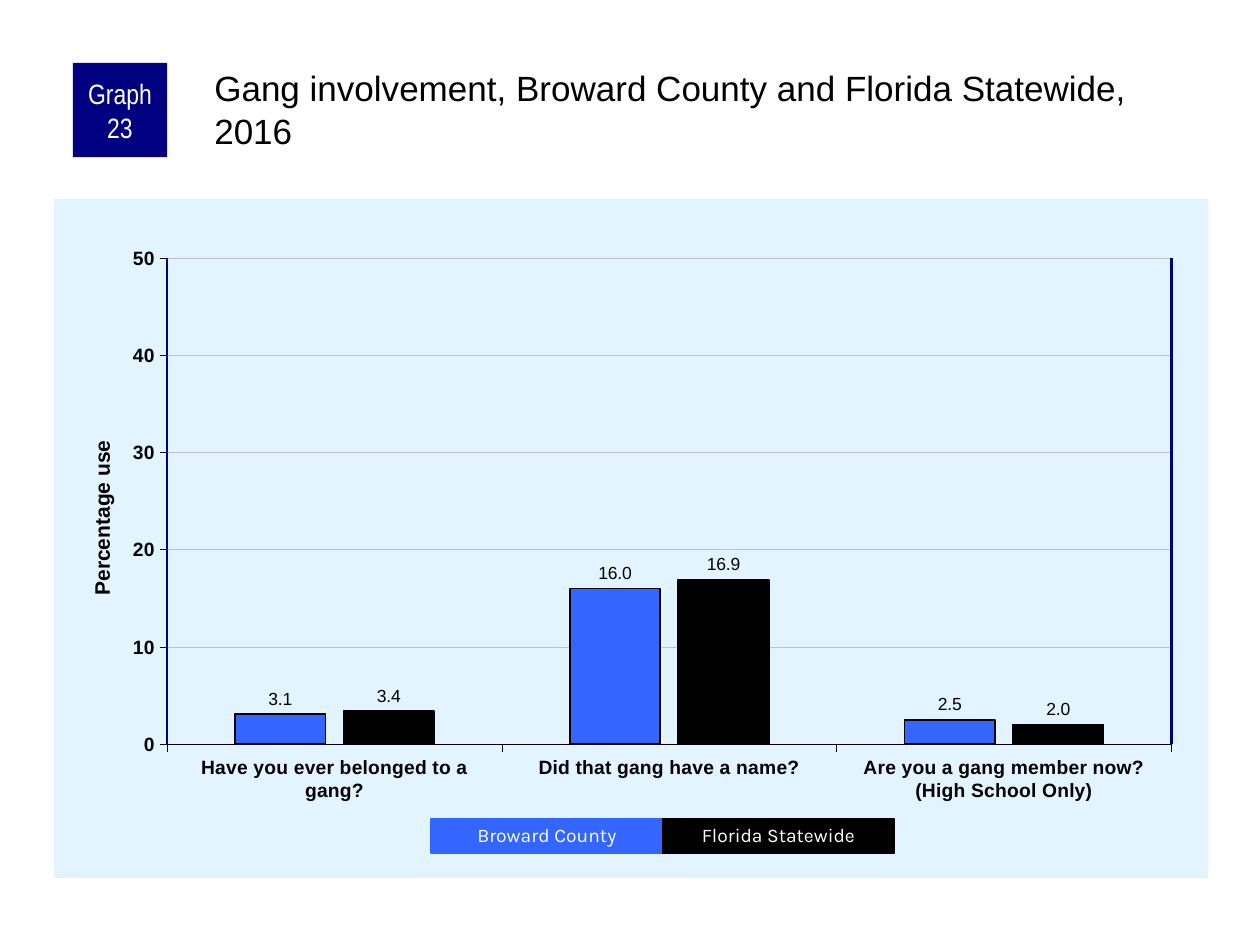
from dataclasses import dataclass

import pptx
import pptx.chart.data
import pptx.dml.color
import pptx.enum.chart
import pptx.enum.shapes
import pptx.enum.text
import pptx.oxml
import pptx.oxml.ns
import pptx.util
from pptx.util import Cm, Pt

NAVY, BLUE, BLACK, WHITE = "000080", "3366FF", "000000", "FFFFFF"
PALE_BLUE, GREY = "E1F4FF", "C0C0C0"
qn = pptx.oxml.ns.qn


@dataclass(frozen=True)
class Box:
    """A rectangle in centimetres."""
    left: float
    top: float
    width: float
    height: float

    def lengths(self) -> tuple:
        return Cm(self.left), Cm(self.top), Cm(self.width), Cm(self.height)


@dataclass(frozen=True)
class Region:
    name: str
    color: str
    values: tuple


REGIONS = [
    Region("Broward County", BLUE, (3.1, 16.0, 2.5)),
    Region("Florida Statewide", BLACK, (3.4, 16.9, 2.0)),
]
QUESTIONS = [
    "Have you ever belonged to a gang?",
    "Did that gang have a name?",
    "Are you a gang member now?\n(High School Only)",
]
CHART = Box(1.09, 4.01, 23.27, 13.69)
PLOT_SHARE = Box(0.098, 0.087, 0.87, 0.716)  # fractions of the chart
KEY = Box(8.69, 16.51, 4.67, 0.69)


def rgb(color: str) -> pptx.dml.color.RGBColor:
    return pptx.dml.color.RGBColor.from_string(color)


def set_fill(fill, color: str) -> None:
    fill.solid()
    fill.fore_color.rgb = rgb(color)


def set_line(line, color: str, width: float) -> None:
    set_fill(line.fill, color)
    line.width = Pt(width)


def set_font(font, name: str, size: float, color: str, bold: bool = False) -> None:
    font.name, font.size, font.bold = name, Pt(size), bold
    font.color.rgb = rgb(color)


def add_label(slide, box: Box, text: str, font_name: str, size: float, fill: str):
    """Add a filled rectangle with centred white text."""
    shape = slide.shapes.add_shape(pptx.enum.shapes.MSO_SHAPE.RECTANGLE, *box.lengths())
    shape.shadow.inherit = False
    set_fill(shape.fill, fill)
    shape.line.fill.background()
    frame = shape.text_frame
    frame.word_wrap = True
    frame.vertical_anchor = pptx.enum.text.MSO_ANCHOR.MIDDLE
    paragraph = frame.paragraphs[0]
    paragraph.alignment = pptx.enum.text.PP_ALIGN.CENTER
    run = paragraph.add_run()
    run.text = text
    set_font(run.font, font_name, size, WHITE)
    return shape


def add_side_line(slide, x: float, top: float, bottom: float) -> None:
    connector = slide.shapes.add_connector(
        pptx.enum.shapes.MSO_CONNECTOR.STRAIGHT, Cm(x), Cm(top), Cm(x), Cm(bottom))
    set_line(connector.line, NAVY, 1.25)
    properties = connector._element.spPr
    properties.append(pptx.oxml.parse_xml(
        f'<a:effectLst {pptx.oxml.ns.nsdecls("a")}/>'))


def set_layout(parent, settings: dict) -> None:
    """Place a chart part by hand, in fractions of the chart."""
    old = parent.find(qn("c:layout"))
    position = 0 if old is None else parent.index(old)
    if old is not None:
        parent.remove(old)
    parts = "".join(f'<c:{tag} val="{value}"/>' for tag, value in settings.items())
    parent.insert(position, pptx.oxml.parse_xml(
        f'<c:layout {pptx.oxml.ns.nsdecls("c")}>'
        f'<c:manualLayout>{parts}</c:manualLayout></c:layout>'))


def format_axis(axis) -> None:
    axis.major_tick_mark = pptx.enum.chart.XL_TICK_MARK.OUTSIDE
    axis.minor_tick_mark = pptx.enum.chart.XL_TICK_MARK.NONE
    set_font(axis.tick_labels.font, "Arial", 11, BLACK, bold=True)
    set_line(axis.format.line, BLACK, 0.25)


def format_value_axis(axis) -> None:
    format_axis(axis)
    axis.minimum_scale, axis.maximum_scale, axis.major_unit = 0, 50, 10
    axis.has_major_gridlines = True
    set_line(axis.major_gridlines.format.line, GREY, 0.25)
    axis.tick_labels.number_format = "0"
    axis.tick_labels.number_format_is_linked = False
    axis.has_title = True
    run = axis.axis_title.text_frame.paragraphs[0].add_run()
    run.text = "Percentage use"
    set_font(run.font, "Arial", 12, BLACK, bold=True)
    title = axis.axis_title._element
    body = title.find(".//" + qn("a:bodyPr"))
    body.set("rot", "-5400000")
    body.set("vert", "horz")
    set_layout(title, {"xMode": "edge", "yMode": "edge", "x": 0.027, "y": 0.35})


def add_gang_chart(slide) -> None:
    data = pptx.chart.data.CategoryChartData(number_format="0.0")
    data.categories = QUESTIONS
    for region in REGIONS:
        data.add_series(region.name, region.values)
    chart = slide.shapes.add_chart(
        pptx.enum.chart.XL_CHART_TYPE.COLUMN_CLUSTERED, *CHART.lengths(), data).chart
    chart.has_title = chart.has_legend = False
    set_font(chart.font, "Arial", 11.5, BLACK)
    chart_space = chart._chartSpace
    chart_space.find(qn("c:chart")).addnext(pptx.oxml.parse_xml(
        f'<c:spPr {pptx.oxml.ns.nsdecls("c", "a")}><a:solidFill>'
        f'<a:srgbClr val="{PALE_BLUE}"/></a:solidFill>'
        '<a:ln><a:noFill/></a:ln></c:spPr>'))
    set_layout(chart_space.find(".//" + qn("c:plotArea")), {
        "layoutTarget": "inner", "xMode": "edge", "yMode": "edge",
        "x": PLOT_SHARE.left, "y": PLOT_SHARE.top,
        "w": PLOT_SHARE.width, "h": PLOT_SHARE.height})
    format_axis(chart.category_axis)
    format_value_axis(chart.value_axis)

    plot = chart.plots[0]
    plot.gap_width, plot.overlap, plot.vary_by_categories = 150, -20, False
    for series, region in zip(plot.series, REGIONS):
        set_fill(series.format.fill, region.color)
        set_line(series.format.line, BLACK, 1)
        labels = series.data_labels
        labels.show_value = True
        labels.number_format, labels.number_format_is_linked = "0.0", False
        labels.position = pptx.enum.chart.XL_LABEL_POSITION.OUTSIDE_END
        set_font(labels.font, "Arial", 10, BLACK)

    left = CHART.left + PLOT_SHARE.left * CHART.width
    top = CHART.top + PLOT_SHARE.top * CHART.height
    bottom = top + PLOT_SHARE.height * CHART.height
    for x in (left, left + PLOT_SHARE.width * CHART.width):
        add_side_line(slide, x, top, bottom)


def fill_title(title) -> None:
    title.left, title.top, title.width, title.height = Box(4.24, 1.27, 20.12, 2.11).lengths()
    frame = title.text_frame
    frame.word_wrap = True
    frame.auto_size = pptx.enum.text.MSO_AUTO_SIZE.NONE
    frame.vertical_anchor = pptx.enum.text.MSO_ANCHOR.TOP
    frame.margin_left = frame.margin_top = Cm(0.08)
    frame.margin_right = frame.margin_bottom = 0
    paragraph = frame.paragraphs[0]
    paragraph.alignment = pptx.enum.text.PP_ALIGN.LEFT
    run = paragraph.add_run()
    run.text = "Gang involvement, Broward County and Florida Statewide, 2016"
    set_font(run.font, "Arial", 20, BLACK)


def main() -> None:
    presentation = pptx.Presentation()
    presentation.slide_width, presentation.slide_height = Cm(25.4), Cm(19.05)
    slide = presentation.slides.add_slide(presentation.slide_layouts[5])
    fill_title(slide.shapes.title)
    add_gang_chart(slide)

    badge = add_label(slide, Box(1.47, 1.27, 1.9, 1.9), "Graph 23", "Arial Narrow", 16, NAVY)
    frame = badge.text_frame
    frame.margin_left = frame.margin_right = Cm(0.13)
    frame.margin_top = frame.margin_bottom = 0

    for index, region in enumerate(REGIONS):
        box = Box(KEY.left + index * KEY.width, KEY.top, KEY.width, KEY.height)
        key = add_label(slide, box, region.name, "Karla", 11, region.color)
        set_line(key.line, region.color, 0.75)
        key.text_frame.paragraphs[0].line_spacing = 0.9

    presentation.save("out.pptx")


if __name__ == "__main__":
    main()
